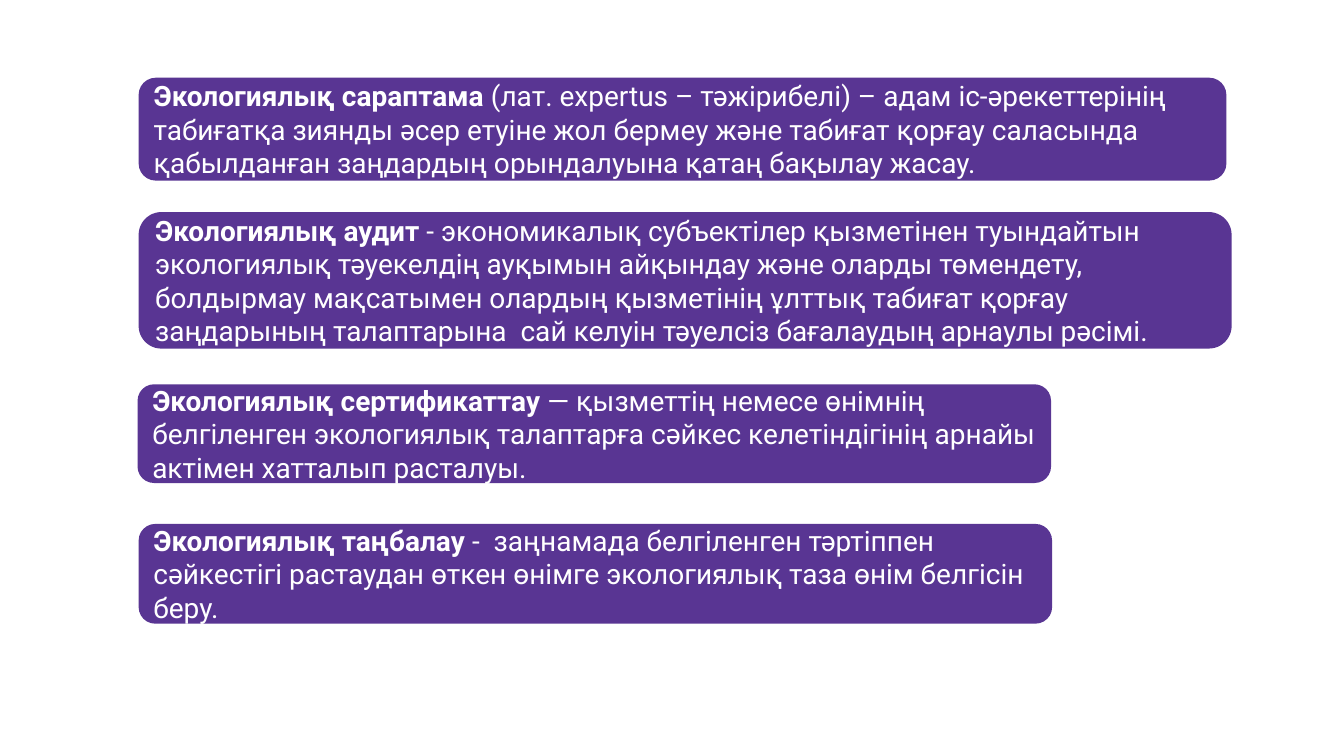
from pptx import Presentation
from pptx.dml.color import RGBColor
from pptx.enum.shapes import MSO_SHAPE
from pptx.enum.text import MSO_ANCHOR, PP_ALIGN
from pptx.util import Pt

PX = 9525
PURPLE = RGBColor(0x59, 0x35, 0x93)
WHITE = RGBColor(0xFF, 0xFF, 0xFF)
ROUND = MSO_SHAPE.ROUNDED_RECTANGLE
MIDDLE = MSO_ANCHOR.MIDDLE
LEFT = PP_ALIGN.LEFT
FONT = "Roboto"

TERMS = [
    ((132, 74, 1036, 98), "Экологиялық сараптама",
     " (лат. expertus – тәжірибелі) – адам іс-әрекеттерінің табиғатқа зиянды "
     "әсер етуіне жол бермеу және табиғат қорғау саласында "
     "қабылданған заңдардың орындалуына қатаң бақылау жасау."),
    ((132, 202, 1041, 130), "Экологиялық аудит",
     " - экономикалық субъектілер қызметінен туындайтын экологиялық "
     "тәуекелдің ауқымын айқындау және оларды төмендету, болдырмау "
     "мақсатымен олардың қызметінің ұлттық табиғат қорғау заңдарының "
     "талаптарына  сай келуін тәуелсіз бағалаудың арнаулы рәсімі."),
    ((131, 366, 870, 94), "Экологиялық сертификаттау ",
     "— қызметтің немесе өнімнің белгіленген экологиялық талаптарға "
     "сәйкес келетіндігінің арнайы актімен хатталып расталуы."),
    ((132, 499, 870, 95), "Экологиялық таңбалау",
     " -  заңнамада белгiленген тәртiппен сәйкестiгi растаудан өткен "
     "өнiмге экологиялық таза өнiм белгiсiн беру."),
]


def add_run(para, text, bold):
    run = para.add_run()
    run.text = text
    font = run.font
    font.name = FONT
    font.size = Pt(20)
    font.bold = bold
    font.color.rgb = WHITE


def add_card(slide, box, term, meaning):
    card = slide.shapes.add_shape(ROUND, *(n * PX for n in box))
    card.shadow.inherit = False
    card.fill.solid()
    card.fill.fore_color.rgb = PURPLE
    card.line.fill.background()
    frame = card.text_frame
    frame.word_wrap = True
    frame.vertical_anchor = MIDDLE
    para = frame.paragraphs[0]
    para.alignment = LEFT
    add_run(para, term, True)
    add_run(para, meaning, False)


def main():
    deck = Presentation()
    deck.slide_width = 1280 * PX
    deck.slide_height = 720 * PX
    slide = deck.slides.add_slide(deck.slide_layouts[6])
    for box, term, meaning in TERMS:
        add_card(slide, box, term, meaning)
    deck.save("out.pptx")


if __name__ == "__main__":
    main()
